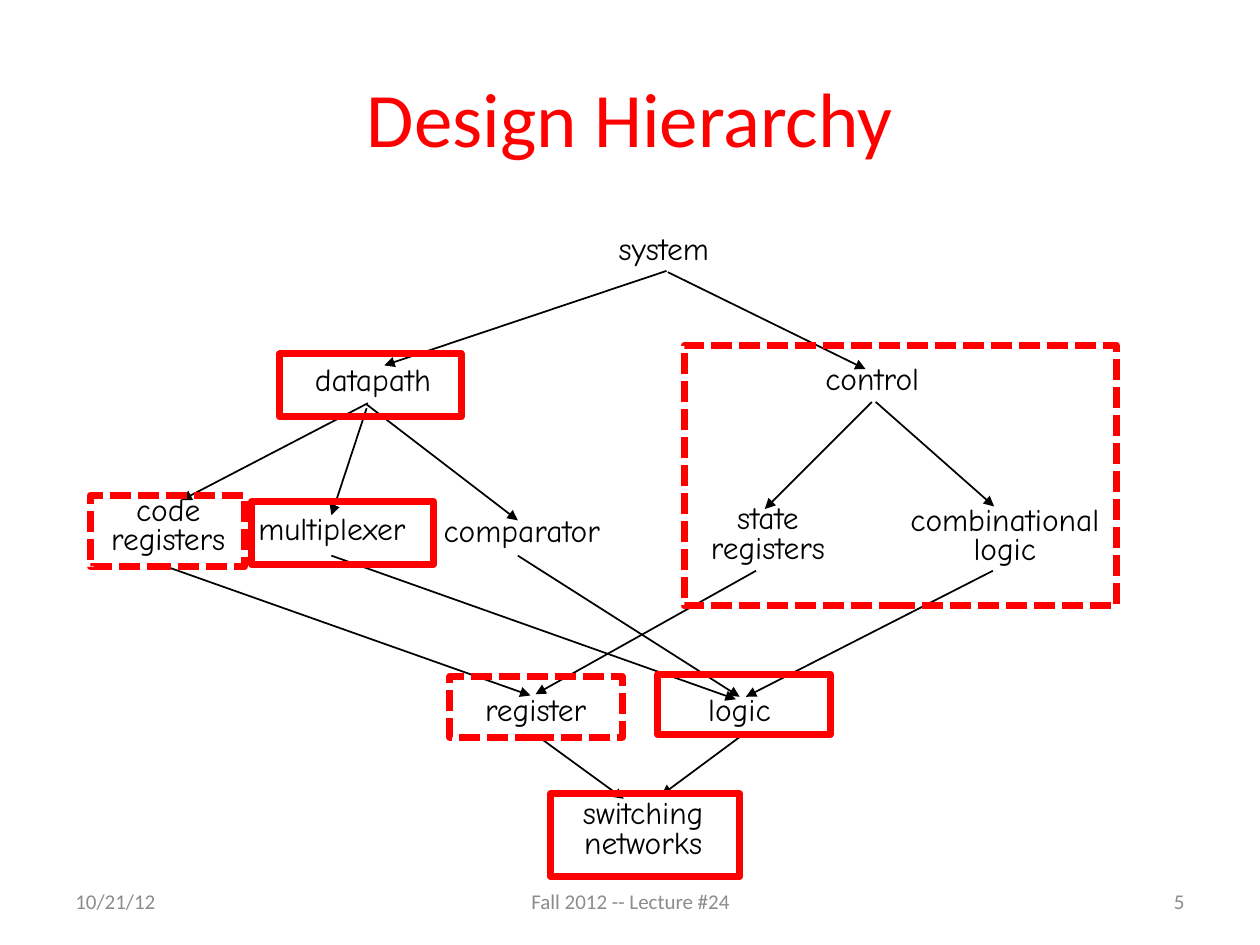
"""Build the Design Hierarchy slide: a tree of blocks with outlined groups."""
from typing import NamedTuple

from pptx import Presentation
from pptx.dml.color import RGBColor
from pptx.enum.dml import MSO_LINE_DASH_STYLE as Dash
from pptx.enum.shapes import MSO_CONNECTOR as Connector, MSO_SHAPE as Shape
from pptx.enum.text import MSO_ANCHOR as Anchor, PP_ALIGN as Align
from pptx.oxml.xmlchemy import OxmlElement
from pptx.util import Inches, Pt

COLORS = {"accent": "FF0000", "ink": "000000", "footer": "8C8C8C"}
BODY_FONT = "Calibri"
LABEL_FONT = "Comic Neue"


class Label(NamedTuple):
    text: str
    left: float
    top: float
    width: float


class Arrow(NamedTuple):
    x1: float
    y1: float
    x2: float
    y2: float


class Outline(NamedTuple):
    left: float
    top: float
    width: float
    height: float
    dashed: bool = False


LABELS = [
    Label("system", 4.89, 1.85, 1.12),
    Label("datapath", 2.48, 2.89, 1.33),
    Label("control", 6.53, 2.88, 1.11),
    Label("state\nregisters", 5.26, 3.99, 1.67),
    Label("combinational\nlogic", 6.79, 4, 2.37),
    Label("multiplexer", 2.03, 4.07, 1.49),
    Label("comparator", 3.5, 4.09, 1.52),
    Label("code\nregisters", 0.83, 3.92, 1.01),
    Label("register", 3.83, 5.51, 1.16),
    Label("logic", 5.6, 5.51, 0.92),
    Label("switching\nnetworks", 4.09, 6.33, 2.03),
]

ARROWS = [
    Arrow(5.3, 2.16, 6.87, 2.93),
    Arrow(5.29, 2.15, 3.05, 2.9),
    Arrow(2.91, 3.24, 2.63, 4.09),
    Arrow(2.91, 3.21, 4.11, 4.13),
    Arrow(2.92, 3.2, 1.44, 3.97),
    Arrow(1.3, 4.49, 4.21, 5.52),
    Arrow(6, 4.53, 4.25, 5.51),
    Arrow(6.92, 3.19, 6.07, 4.04),
    Arrow(6.95, 3.19, 7.89, 4.02),
    Arrow(4.11, 4.41, 5.87, 5.53),
    Arrow(2.63, 4.41, 5.84, 5.55),
    Arrow(7.88, 4.53, 5.92, 5.53),
    Arrow(5.87, 5.85, 5.25, 6.31),
    Arrow(4.25, 5.83, 4.95, 6.34),
]

OUTLINES = [
    Outline(5.22, 5.35, 1.37, 0.48),
    Outline(4.37, 6.3, 1.5, 0.66),
    Outline(2, 3.98, 1.44, 0.5),
    Outline(2.22, 2.81, 1.44, 0.5),
    Outline(5.43, 2.74, 3.43, 2.07, dashed=True),
    Outline(3.57, 5.37, 1.37, 0.48, dashed=True),
    Outline(0.72, 3.93, 1.22, 0.57, dashed=True),
]

FOOTERS = [
    (Label("10/21/12", 0.5, 6.95, 2.33), Align.LEFT),
    (Label("Fall 2012 -- Lecture #24", 3.42, 6.95, 3.17), Align.CENTER),
    (Label("5", 7.17, 6.95, 2.33), Align.RIGHT),
]


def color(name: str) -> RGBColor:
    return RGBColor.from_string(COLORS[name])


def write(box, text: str, *, size: float, font: str, ink: str, align=Align.LEFT,
          anchor=Anchor.TOP, spacing=None, insets=(0.1, 0.05)) -> None:
    """Fill a box with one formatted paragraph."""
    frame = box.text_frame
    frame.word_wrap = True
    frame.vertical_anchor = anchor
    frame.margin_left = frame.margin_right = Inches(insets[0])
    frame.margin_top = frame.margin_bottom = Inches(insets[1])
    para = frame.paragraphs[0]
    para.text = text
    para.alignment = align
    para.line_spacing = spacing
    for span in para.runs:
        span.font.size = Pt(size)
        span.font.name = font
        span.font.color.rgb = color(ink)


def add_box(page, label: Label, height: float):
    return page.shapes.add_textbox(Inches(label.left), Inches(label.top),
                                   Inches(label.width), Inches(height))


def add_label(page, label: Label) -> None:
    stacked = "\n" in label.text
    box = add_box(page, label, 0.6 if stacked else 0.37)
    write(box, label.text, size=18, font=LABEL_FONT, ink="ink",
          align=Align.CENTER if stacked else Align.LEFT,
          spacing=Pt(17), insets=(0.02, 0.03))


def add_arrow(page, arrow: Arrow) -> None:
    line = page.shapes.add_connector(Connector.STRAIGHT, *map(Inches, arrow))
    line.line.color.rgb = color("ink")
    line.line.width = Pt(1)
    head = OxmlElement("a:tailEnd")
    head.set("type", "triangle")
    line.line._get_or_add_ln().append(head)
    line._element.spPr.append(OxmlElement("a:effectLst"))


def add_outline(page, outline: Outline) -> None:
    frame = page.shapes.add_shape(Shape.RECTANGLE, *map(Inches, outline[:4]))
    frame.shadow.inherit = False
    frame.fill.background()
    frame.line.color.rgb = color("accent")
    frame.line.width = Pt(4)
    if outline.dashed:
        frame.line.dash_style = Dash.SQUARE_DOT


def main() -> None:
    deck = Presentation()
    deck.slide_width, deck.slide_height = Inches(10), Inches(7.5)
    page = deck.slides.add_slide(deck.slide_layouts[5])

    title = page.shapes.title
    title.left, title.top = Inches(0.5), Inches(0.3)
    title.width, title.height = Inches(9), Inches(1.25)
    write(title, "Design Hierarchy", size=44, font=BODY_FONT, ink="accent",
          align=Align.CENTER, anchor=Anchor.MIDDLE)

    for label in LABELS:
        add_label(page, label)
    for arrow in ARROWS:
        add_arrow(page, arrow)
    for footer, align in FOOTERS:
        write(add_box(page, footer, 0.4), footer.text, size=12, font=BODY_FONT,
              ink="footer", align=align, anchor=Anchor.MIDDLE)
    for outline in OUTLINES:
        add_outline(page, outline)

    deck.save("out.pptx")


if __name__ == "__main__":
    main()
